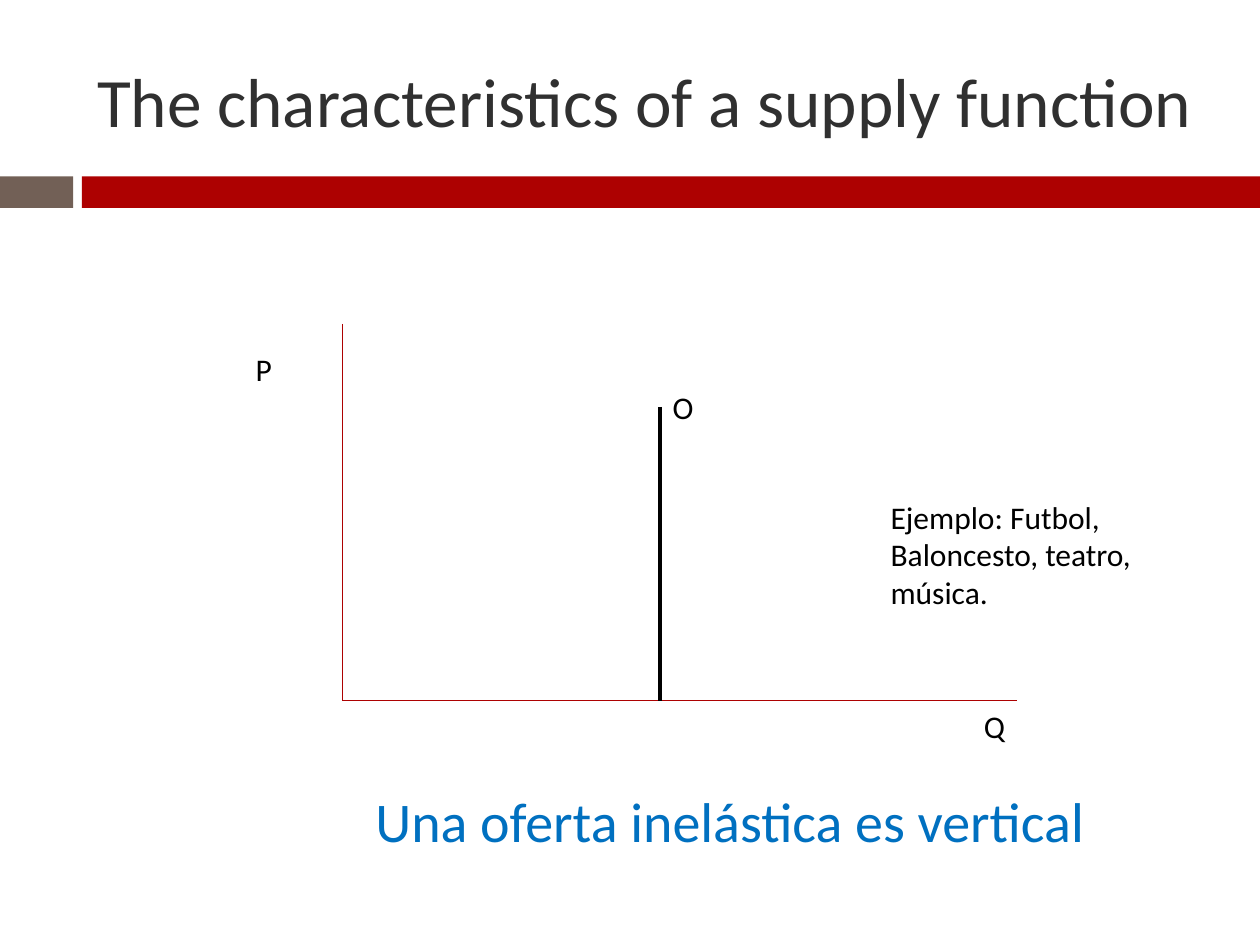
import dataclasses

import pptx
import pptx.dml.color
import pptx.enum.shapes
import pptx.enum.text
import pptx.oxml
import pptx.oxml.ns
import pptx.slide
import pptx.text.text
import pptx.util

Inches = pptx.util.Inches
Align = pptx.enum.text.PP_ALIGN
Anchor = pptx.enum.text.MSO_ANCHOR

FONT = "Calibri"
COLORS = {
    "title": "303030",
    "red": "AD0101",
    "brown": "726056",
    "black": "000000",
    "blue": "0070C0",
}
BAR_TOP, BAR_HEIGHT = 1.4, 0.25
ORIGIN_X, ORIGIN_Y = 2.72, 5.56
SUPPLY_X = 5.24


@dataclasses.dataclass
class Bar:
    left: float
    width: float
    color: str


@dataclasses.dataclass
class Line:
    start: tuple[float, float]
    end: tuple[float, float]
    color: str = "red"
    weight: float = 0.79


@dataclasses.dataclass
class Label:
    text: str
    left: float
    top: float
    width: float
    height: float = 0.4
    size: float = 18
    color: str = "black"
    align: Align = Align.LEFT


BARS = [Bar(0, 0.58, "brown"), Bar(0.65, 9.35, "red")]
LINES = [
    Line((ORIGIN_X, 2.57), (ORIGIN_X, ORIGIN_Y)),
    Line((ORIGIN_X, ORIGIN_Y), (8.07, ORIGIN_Y)),
    Line((SUPPLY_X, 3.23), (SUPPLY_X, ORIGIN_Y), "black", 2),
]
LABELS = [
    Label("P", 1.93, 2.73, 0.79),
    Label("Q", 7.71, ORIGIN_Y, 1.1),
    Label("Una oferta inelástica es vertical", 2.81, 6.19, 5.97, 0.64, 32, "blue", Align.CENTER),
    Label("Ejemplo: Futbol, Baloncesto, teatro, música.", 6.97, 3.9, 2.6, 1.01),
    Label("O", SUPPLY_X, 3.03, 0.94),
]


def rgb(name: str) -> pptx.dml.color.RGBColor:
    return pptx.dml.color.RGBColor.from_string(COLORS[name])


def write_text(frame: pptx.text.text.TextFrame, text: str, *, size: float, color: str,
               align: Align = Align.LEFT, anchor: Anchor = Anchor.TOP) -> None:
    frame.word_wrap = True
    frame.auto_size = pptx.enum.text.MSO_AUTO_SIZE.NONE
    frame.vertical_anchor = anchor
    para = frame.paragraphs[0]
    para.alignment = align
    span = para.add_run()
    span.text = text
    span.font.name = FONT
    span.font.size = pptx.util.Pt(size)
    span.font.color.rgb = rgb(color)


def add_title(page: pptx.slide.Slide, text: str) -> None:
    title = page.shapes.title
    title.left, title.top = Inches(0.67), Inches(0.25)
    title.width, title.height = Inches(8.92), Inches(1.08)
    write_text(title.text_frame, text, size=39.6, color="title", anchor=Anchor.MIDDLE)


def add_bar(page: pptx.slide.Slide, bar: Bar) -> None:
    shape = page.shapes.add_shape(
        pptx.enum.shapes.MSO_SHAPE.RECTANGLE,
        Inches(bar.left), Inches(BAR_TOP), Inches(bar.width), Inches(BAR_HEIGHT))
    shape.shadow.inherit = False
    shape.fill.solid()
    shape.fill.fore_color.rgb = rgb(bar.color)
    shape.line.fill.background()


def add_line(page: pptx.slide.Slide, line: Line) -> None:
    connector = page.shapes.add_connector(
        pptx.enum.shapes.MSO_CONNECTOR.STRAIGHT,
        *(Inches(value) for value in line.start + line.end))
    connector.line.color.rgb = rgb(line.color)
    connector.line.width = pptx.util.Pt(line.weight)
    properties = connector._element.spPr
    properties.append(pptx.oxml.parse_xml(f"<a:effectLst {pptx.oxml.ns.nsdecls('a')}/>"))


def add_label(page: pptx.slide.Slide, label: Label) -> None:
    box = page.shapes.add_textbox(
        Inches(label.left), Inches(label.top), Inches(label.width), Inches(label.height))
    write_text(box.text_frame, label.text,
               size=label.size, color=label.color, align=label.align)


def main() -> None:
    deck = pptx.Presentation()
    deck.slide_width, deck.slide_height = Inches(10), Inches(7.5)
    page = deck.slides.add_slide(deck.slide_layouts.get_by_name("Title Only"))
    add_title(page, "The characteristics of a supply function")
    for bar in BARS:
        add_bar(page, bar)
    for line in LINES:
        add_line(page, line)
    for label in LABELS:
        add_label(page, label)
    deck.save("out.pptx")


if __name__ == "__main__":
    main()
